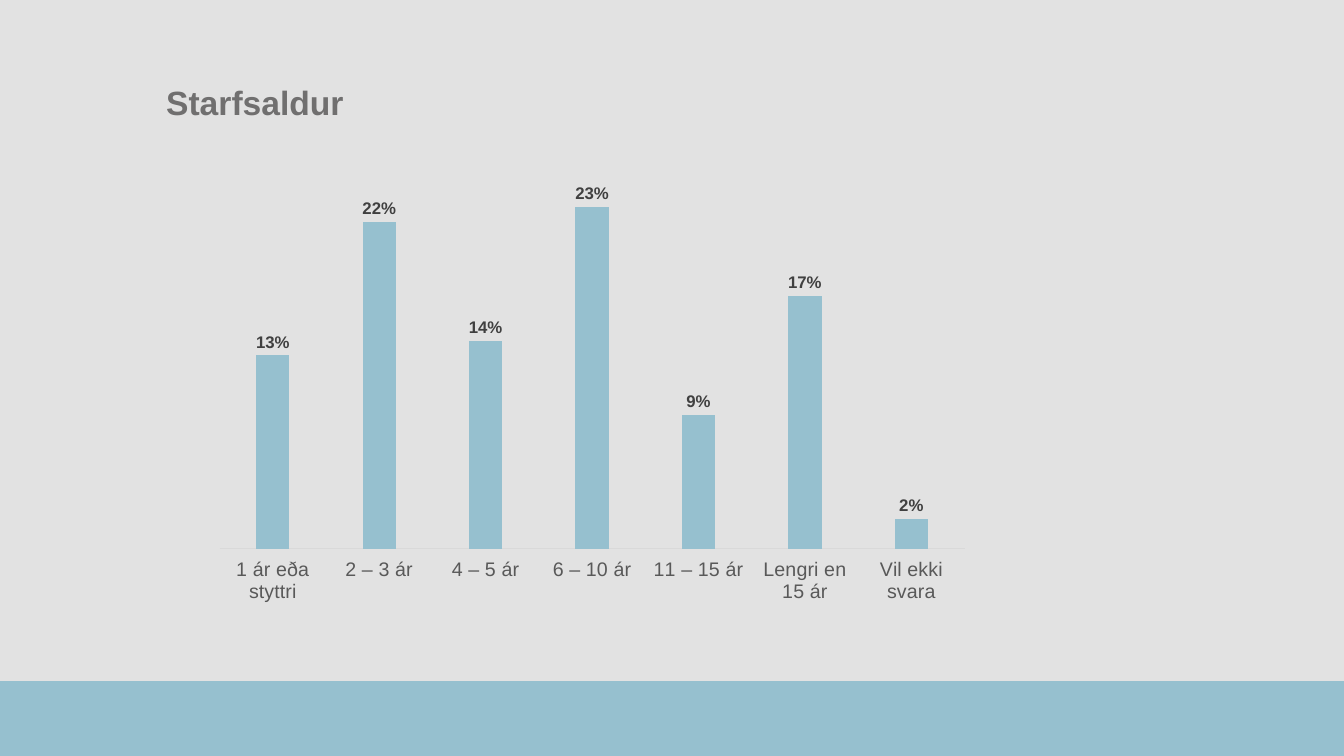
from pptx import Presentation
from pptx.chart.data import CategoryChartData
from pptx.dml.color import RGBColor
from pptx.enum.chart import XL_CHART_TYPE, XL_LABEL_POSITION, XL_TICK_LABEL_POSITION, XL_TICK_MARK
from pptx.enum.shapes import MSO_SHAPE
from pptx.enum.text import MSO_ANCHOR, PP_ALIGN
from pptx.oxml import parse_xml
from pptx.oxml.ns import nsdecls, qn
from pptx.util import Pt

COLORS = {
    "background": "E2E2E2",
    "blue": "96C0CF",
    "title": "706F6F",
    "axis_text": "595959",
    "axis_line": "D9D9D9",
    "label": "404040",
}
TENURE_SHARES = {
    "1 ár eða styttri": 0.13,
    "2 – 3 ár": 0.22,
    "4 – 5 ár": 0.14,
    "6 – 10 ár": 0.23,
    "11 – 15 ár": 0.09,
    "Lengri en 15 ár": 0.17,
    "Vil ekki svara": 0.02,
}
PLOT_LAYOUT = {"x": 0, "y": 0.08, "w": 0.94, "h": 0.78}


def style_font(font, size, color, bold=False):
    font.name = "Arial"
    font.size = Pt(size)
    font.bold = bold
    font.color.rgb = RGBColor.from_string(COLORS[color])


presentation = Presentation()
presentation.slide_width = Pt(960)
presentation.slide_height = Pt(540)
slide = presentation.slides.add_slide(presentation.slide_layouts[5])
slide.background.fill.solid()
slide.background.fill.fore_color.rgb = RGBColor.from_string(COLORS["background"])

# Footer band
band = slide.shapes.add_shape(MSO_SHAPE.RECTANGLE, Pt(0), Pt(486.5), Pt(960), Pt(53.5))
band.shadow.inherit = False
band.fill.solid()
band.fill.fore_color.rgb = RGBColor.from_string(COLORS["blue"])
band.line.fill.background()

# Title
title = slide.shapes.title
title.left, title.top, title.width, title.height = Pt(111.5), Pt(50), Pt(737.5), Pt(49)
title.text_frame.text = "Starfsaldur"
title.text_frame.vertical_anchor = MSO_ANCHOR.MIDDLE
paragraph = title.text_frame.paragraphs[0]
paragraph.alignment = PP_ALIGN.LEFT
paragraph.line_spacing = 0.9
style_font(paragraph.runs[0].font, 24, "title", bold=True)

# Column chart
chart_data = CategoryChartData(number_format="0%")
chart_data.categories = list(TENURE_SHARES)
chart_data.add_series("Series 1", list(TENURE_SHARES.values()))
chart = slide.shapes.add_chart(
    XL_CHART_TYPE.COLUMN_CLUSTERED, Pt(156.5), Pt(99.5), Pt(566.5), Pt(340), chart_data
).chart
chart.has_legend = False
chart.has_title = False
chart.font.name = "Arial"
chart.font.size = Pt(10)

plot = chart.plots[0]
plot.gap_width = 219
plot.overlap = -27
plot.vary_by_categories = False
series = plot.series[0]
series.format.fill.solid()
series.format.fill.fore_color.rgb = RGBColor.from_string(COLORS["blue"])

labels = series.data_labels
labels.show_value = True
labels.number_format = "0%"
labels.number_format_is_linked = False
labels.position = XL_LABEL_POSITION.OUTSIDE_END
style_font(labels.font, 12, "label", bold=True)

category_axis = chart.category_axis
category_axis.major_tick_mark = XL_TICK_MARK.NONE
category_axis.tick_label_position = XL_TICK_LABEL_POSITION.LOW
category_axis.format.line.color.rgb = RGBColor.from_string(COLORS["axis_line"])
category_axis.format.line.width = Pt(0.75)
style_font(category_axis.tick_labels.font, 14, "axis_text")

value_axis = chart.value_axis
value_axis.visible = False
value_axis.has_major_gridlines = False
value_axis.minimum_scale = 0
value_axis.maximum_scale = 0.25
value_axis.tick_labels.number_format = "0.0%"
value_axis.tick_labels.number_format_is_linked = False

# Fixed inner plot area
plot_area = chart.element.find(".//" + qn("c:plotArea"))
for layout in plot_area.findall(qn("c:layout")):
    plot_area.remove(layout)
positions = "".join(f'<c:{side} val="{share}"/>' for side, share in PLOT_LAYOUT.items())
plot_area.insert(0, parse_xml(
    f'<c:layout {nsdecls("c")}><c:manualLayout><c:layoutTarget val="inner"/>'
    f'<c:xMode val="edge"/><c:yMode val="edge"/>{positions}</c:manualLayout></c:layout>'
))

presentation.save("out.pptx")
